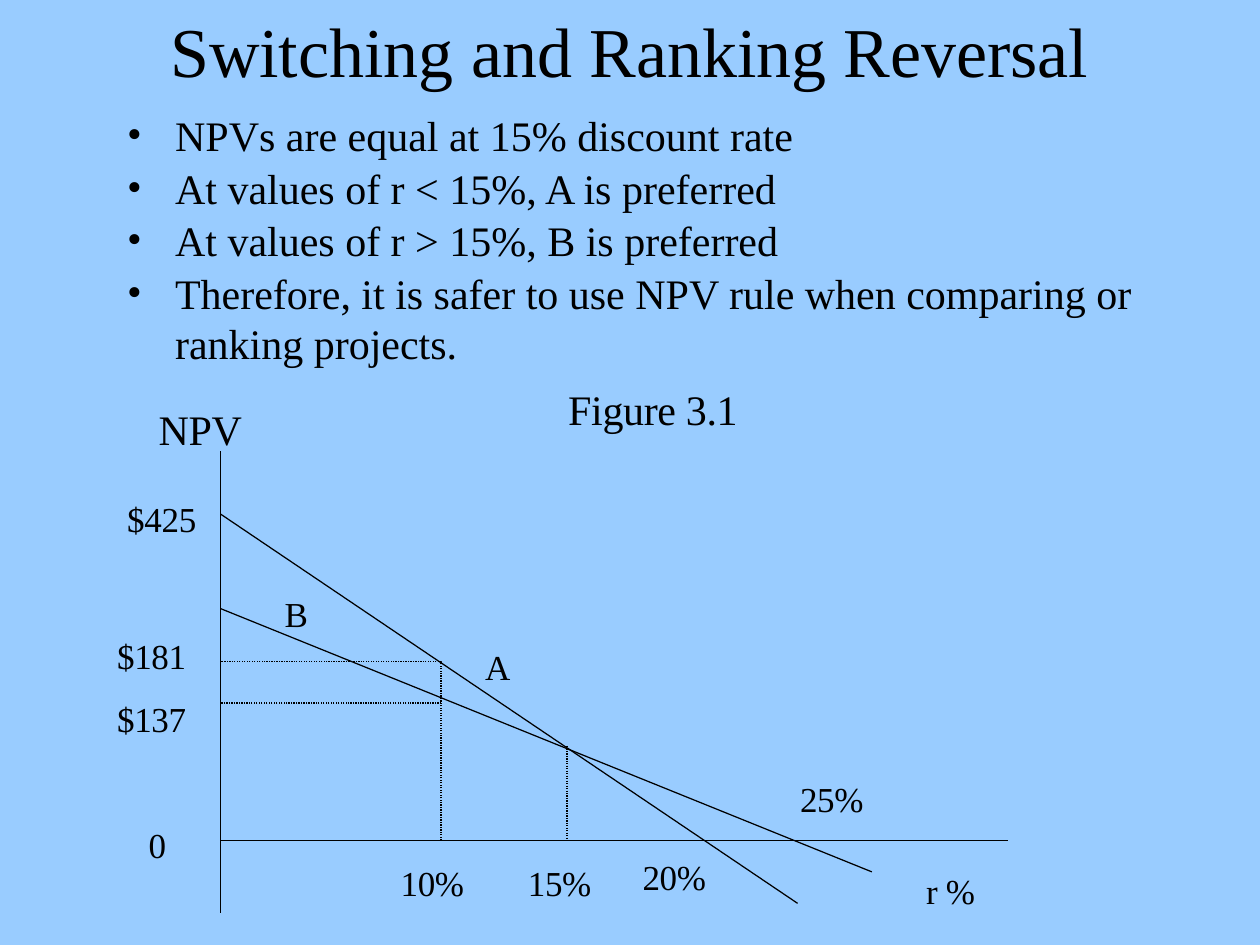
from lxml import etree
from pptx import Presentation, util as u
from pptx.dml.color import RGBColor
from pptx.enum import dml, shapes, text
from pptx.oxml.ns import qn

SKY = RGBColor(0x99, 0xCC, 0xFF)
BLACK = RGBColor(0, 0, 0)
FONT = "Times New Roman"

TITLE = "Switching and Ranking Reversal"
BULLETS = [
    "NPVs are equal at 15% discount rate",
    "At values of r < 15%, A is preferred",
    "At values of r > 15%, B is preferred",
    "Therefore, it is safer to use NPV rule when comparing or ranking projects.",
]

# Figure geometry in inches
ORIGIN_X, ORIGIN_Y = 1.75, 6.67
RATE_10, RATE_15 = 3.5, 4.5
NPV_181, NPV_137 = 5.25, 5.58

AXES_AND_PROJECT_A = [
    [(ORIGIN_X, 3.58), (ORIGIN_X, 7.25)],
    [(ORIGIN_X, ORIGIN_Y), (8, ORIGIN_Y)],
    [(ORIGIN_X, 4.08), (6.33, 7.17)],
]
GUIDE_181 = [[(RATE_10, ORIGIN_Y), (RATE_10, NPV_181), (ORIGIN_X, NPV_181)]]
PROJECT_B = (ORIGIN_X, 4.83), (6.92, 6.92)
GUIDE_137 = (RATE_10, NPV_137), (ORIGIN_X, NPV_137)
GUIDE_15 = (RATE_15, 5.92), (RATE_15, ORIGIN_Y)

LABELS = [  # text, left, top, width, size
    ("Figure 3.1", 4.5, 3.03, 1.4, 24),
    ("NPV", 1.25, 3.19, 0.69, 24),
    ("$425", 1, 3.94, 0.59, 20),
    ("$181", 0.92, 5.03, 0.59, 20),
    ("$137", 0.92, 5.53, 0.59, 20),
    ("0", 1.17, 6.53, 0.2, 20),
    ("B", 2.25, 4.69, 0.23, 20),
    ("A", 3.84, 5.11, 0.25, 20),
    ("10%", 3.17, 6.83, 0.54, 20),
    ("15%", 4.18, 6.83, 0.54, 20),
    ("20%", 5.09, 6.78, 0.54, 20),
    ("25%", 6.34, 6.16, 0.54, 20),
    ("r %", 7.34, 6.89, 0.42, 20),
]


def place(shape, left, top, width, height):
    shape.left, shape.top = u.Inches(left), u.Inches(top)
    shape.width, shape.height = u.Inches(width), u.Inches(height)


def write(shape, lines, size, space_before=0, spacing=0):
    """Fill the shape with left-aligned lines; spacing is in hundredths of a point."""
    frame = shape.text_frame
    frame.text = "\n".join(lines)
    frame.word_wrap = True
    frame.auto_size = text.MSO_AUTO_SIZE.NONE
    frame.vertical_anchor = text.MSO_ANCHOR.TOP
    frame.margin_left = frame.margin_top = u.Inches(0.01)
    frame.margin_right = frame.margin_bottom = 0
    for paragraph in frame.paragraphs:
        paragraph.alignment = text.PP_ALIGN.LEFT
        paragraph.space_before = u.Pt(space_before)
        run = paragraph.runs[0]
        run.font.name, run.font.size = FONT, u.Pt(size)
        run.font.color.rgb = BLACK
        run._r.get_or_add_rPr().set("spc", str(spacing))


def add_text(slide, lines, left, top, width, height, *style):
    shape = slide.shapes.add_textbox(0, 0, 0, 0)
    place(shape, left, top, width, height)
    write(shape, lines, *style)
    return shape


def add_bullets(shape):
    for paragraph in shape.text_frame.paragraphs:
        properties = paragraph._p.get_or_add_pPr()
        properties.set("marL", str(u.Inches(0.38)))
        properties.set("indent", str(-u.Inches(0.38)))
        etree.SubElement(properties, qn("a:buFont")).set("typeface", FONT)
        etree.SubElement(properties, qn("a:buChar")).set("char", "•")


def style_line(shape, dash):
    shape.line.color.rgb = BLACK
    shape.line.width = u.Pt(0.72)
    if dash:
        shape.line.dash_style = dash


def add_line(slide, start, end, dash=None):
    points = [u.Inches(value) for value in (*start, *end)]
    line = slide.shapes.add_connector(shapes.MSO_CONNECTOR.STRAIGHT, *points)
    style_line(line, dash)
    etree.SubElement(line._element.spPr, qn("a:effectLst"))


def add_outline(slide, contours, dash=None):
    """Draw several open contours as one unfilled shape."""
    contours = [[(u.Inches(x), u.Inches(y)) for x, y in contour] for contour in contours]
    builder = slide.shapes.build_freeform(*contours[0][0])
    for index, (start, *rest) in enumerate(contours):
        if index:
            builder.move_to(*start)
        builder.add_line_segments(rest, close=False)
    outline = builder.convert_to_shape()
    outline.shadow.inherit = False
    outline.fill.background()
    style_line(outline, dash)


def add_backdrop(slide, width, height):
    backdrop = slide.shapes.add_shape(shapes.MSO_SHAPE.RECTANGLE, 0, 0, width, height)
    backdrop.shadow.inherit = False
    backdrop.fill.solid()
    backdrop.fill.fore_color.rgb = SKY
    backdrop.line.fill.background()
    slide.shapes.title._element.addprevious(backdrop._element)


def main():
    presentation = Presentation()
    presentation.slide_width, presentation.slide_height = u.Inches(10), u.Inches(7.5)
    slide = presentation.slides.add_slide(presentation.slide_layouts[5])
    add_backdrop(slide, presentation.slide_width, presentation.slide_height)

    title = slide.shapes.title
    place(title, 1.34, 0.05, 7.33, 0.69)
    write(title, [TITLE], 40)

    add_bullets(add_text(slide, BULLETS, 1, 0.86, 8.02, 2.08, 24, 1.2))

    dotted = dml.MSO_LINE.ROUND_DOT
    add_outline(slide, AXES_AND_PROJECT_A)
    add_outline(slide, GUIDE_181, dotted)
    add_line(slide, *PROJECT_B)
    add_line(slide, *GUIDE_15, dotted)
    add_line(slide, *GUIDE_137, dotted)
    for label, left, top, width, size in LABELS:
        add_text(slide, [label], left, top, width, size * 0.018, size, 0, -20)

    presentation.save("out.pptx")


if __name__ == "__main__":
    main()
